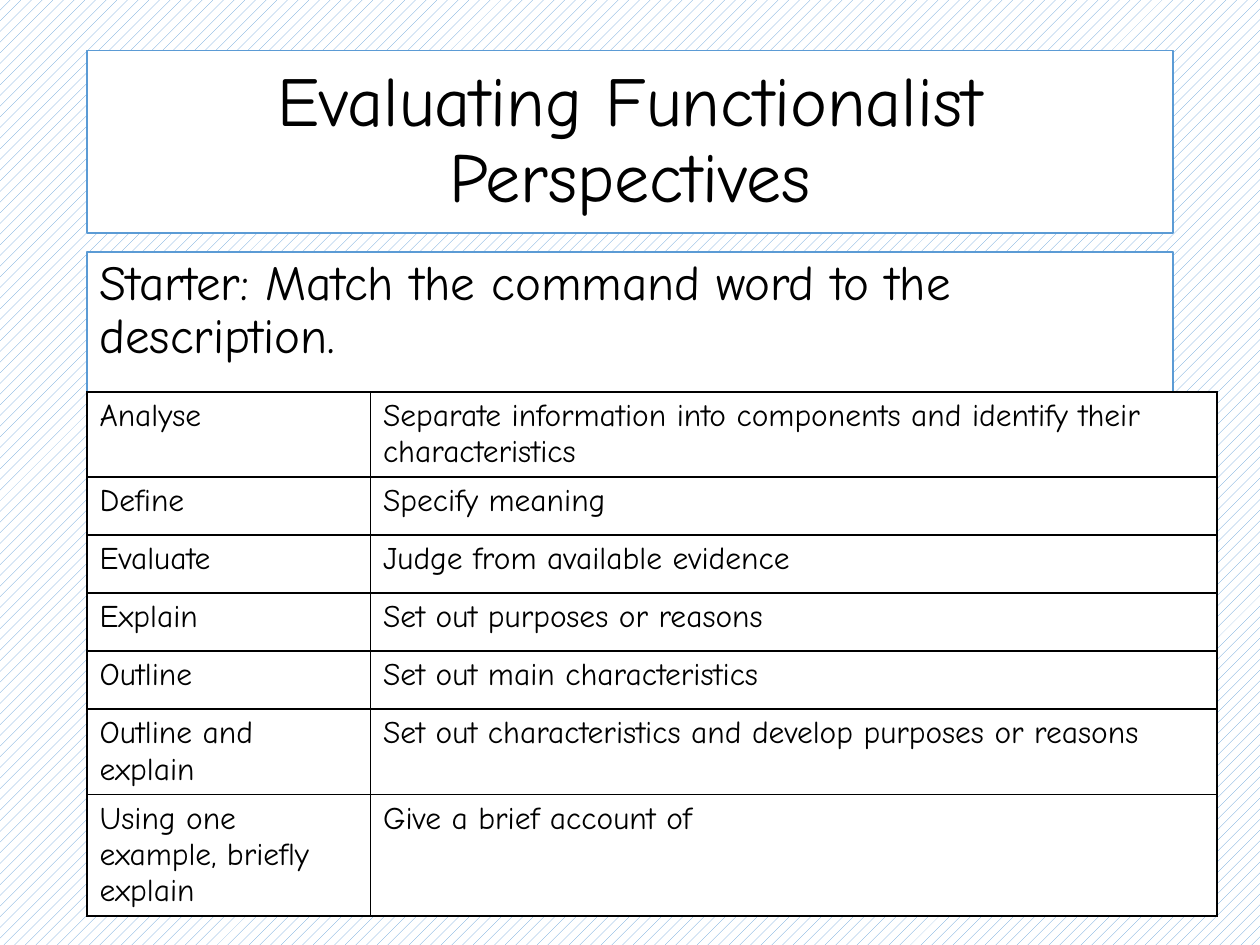
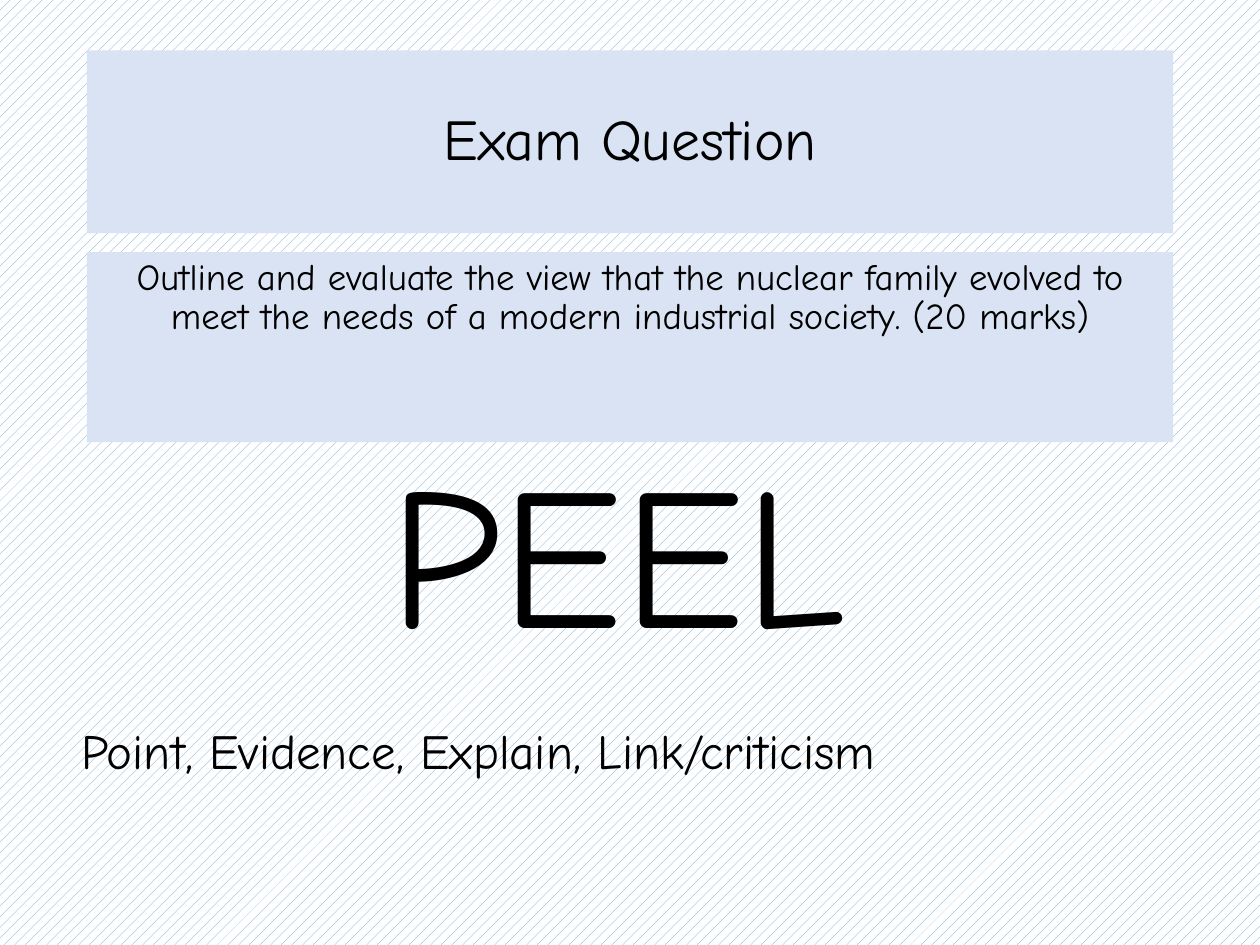
import dataclasses

import lxml.etree
import pptx
import pptx.dml.color
import pptx.enum.dml
import pptx.enum.text
import pptx.oxml
import pptx.oxml.ns
import pptx.util

Inches = pptx.util.Inches
Pt = pptx.util.Pt
ALIGN = pptx.enum.text.PP_ALIGN
ANCHOR = pptx.enum.text.MSO_ANCHOR
qn = pptx.oxml.ns.qn


def rgb(code):
    """Return the colour for a hex code."""
    return pptx.dml.color.RGBColor.from_string(code)


@dataclasses.dataclass(frozen=True)
class Theme:
    """Colours, font and type sizes shared by the slides."""

    font: str = "Comic Neue"
    ink: str = "000000"
    paper: str = "FFFFFF"
    accent: str = "5B9BD5"
    pale: str = "DAE3F3"
    heading: int = 40
    subheading: int = 33
    prompt: int = 28
    question: int = 21
    cell: int = 18
    acronym: int = 115


THEME = Theme()
TITLE_BOX = (0.69, 0.4, 8.62, 1.45)
COMMAND_WORDS = [
    ("Analyse", "Separate information into components and identify their characteristics"),
    ("Define", "Specify meaning"),
    ("Evaluate", "Judge from available evidence"),
    ("Explain", "Set out purposes or reasons"),
    ("Outline", "Set out main characteristics"),
    ("Outline and explain", "Set out characteristics and develop purposes or reasons"),
    ("Using one example, briefly explain", "Give a brief account of"),
]


def apply(target, formats):
    """Set each format value on the target."""
    for name, value in formats.items():
        setattr(target, name, value)


def write(frame, text, size, **paragraph_formats):
    """Write one paragraph in the theme font."""
    paragraph = frame.paragraphs[0]
    apply(paragraph, paragraph_formats)
    run = paragraph.add_run()
    run.text = text
    apply(run.font, {"name": THEME.font, "size": Pt(size), "bold": False})
    run.font.color.rgb = rgb(THEME.ink)
    return paragraph


def place(shape, box):
    """Move and size a shape to a box in inches."""
    apply(shape, dict(zip(("left", "top", "width", "height"), map(Inches, box))))


def panel(placeholder, box, fill, outlined, anchor):
    """Turn a placeholder into a filled panel and return its text frame."""
    place(placeholder, box)
    placeholder.fill.solid()
    placeholder.fill.fore_color.rgb = rgb(fill)
    if outlined:
        placeholder.line.color.rgb = rgb(THEME.accent)
        placeholder.line.width = Pt(1)
    else:
        placeholder.line.fill.background()
    frame = placeholder.text_frame
    apply(frame, {"word_wrap": True, "vertical_anchor": anchor,
                  "auto_size": pptx.enum.text.MSO_AUTO_SIZE.NONE})
    return frame


def title_panel(slide, text, size, fill, outlined=False):
    """Fill the title band at the top of a slide."""
    frame = panel(slide.shapes.title, TITLE_BOX, fill, outlined, ANCHOR.MIDDLE)
    write(frame, text, size, alignment=ALIGN.CENTER, line_spacing=0.9)


def body_panel(slide, box, text, size, fill, align, outlined=False):
    """Fill the body panel with one unbulleted paragraph."""
    frame = panel(slide.placeholders[1], box, fill, outlined, ANCHOR.TOP)
    paragraph = write(frame, text, size, alignment=align, line_spacing=0.9,
                      space_before=Pt(7.5))
    properties = paragraph._p.get_or_add_pPr()
    properties.set("marL", "0")
    properties.set("indent", "0")
    lxml.etree.SubElement(properties, qn("a:buNone"))


def border_cell(cell):
    """Draw a thin line on every side of a table cell."""
    properties = cell._tc.get_or_add_tcPr()
    for side in ("lnL", "lnR", "lnT", "lnB"):
        line = lxml.etree.SubElement(properties, qn(f"a:{side}"), w=str(Pt(1)))
        fill = lxml.etree.SubElement(line, qn("a:solidFill"))
        lxml.etree.SubElement(fill, qn("a:srgbClr"), val=THEME.ink)


def command_table(slide, box, word_width, row_height):
    """Lay out command words beside their descriptions."""
    left, top, width = box
    count = len(COMMAND_WORDS)
    table = slide.shapes.add_table(count, 2, Inches(left), Inches(top), Inches(width),
                                   Inches(row_height * count)).table
    apply(table, {"first_row": False, "horz_banding": False})
    for column, column_width in zip(table.columns, (word_width, width - word_width)):
        column.width = Inches(column_width)
    for row, entry in zip(table.rows, COMMAND_WORDS):
        row.height = Inches(row_height)
        for cell, text in zip(row.cells, entry):
            write(cell.text_frame, text, THEME.cell)
            border_cell(cell)
            cell.fill.solid()
            cell.fill.fore_color.rgb = rgb(THEME.paper)


def free_text(slide, box, text, size):
    """Add a single unwrapped line of text."""
    frame = slide.shapes.add_textbox(*map(Inches, box)).text_frame
    apply(frame, {"word_wrap": False,
                  "auto_size": pptx.enum.text.MSO_AUTO_SIZE.SHAPE_TO_FIT_TEXT})
    write(frame, text, size)


def new_slide(deck):
    """Add a slide with the hatched background."""
    slide = deck.slides.add_slide(deck.slide_layouts[1])
    fill = slide.background.fill
    fill.patterned()
    fill.pattern = pptx.enum.dml.MSO_PATTERN.DASHED_UPWARD_DIAGONAL
    fill.fore_color.rgb = rgb(THEME.accent)
    fill.back_color.rgb = rgb(THEME.paper)
    return slide


def starter_slide(deck):
    """Build the command word matching slide."""
    slide = new_slide(deck)
    title_panel(slide, "Evaluating Functionalist Perspectives", THEME.heading,
                THEME.paper, outlined=True)
    body_panel(slide, (0.69, 2, 8.62, 4.76),
               "Starter: Match the command word to the description.",
               THEME.prompt, THEME.paper, ALIGN.LEFT, outlined=True)
    command_table(slide, (0.69, 3.11, 8.97), word_width=2.25, row_height=0.46)


def exam_slide(deck):
    """Build the exam question slide."""
    slide = new_slide(deck)
    title_panel(slide, "Exam Question", THEME.subheading, THEME.pale)
    body_panel(slide, (0.69, 2, 8.62, 1.51),
               "Outline and evaluate the view that the nuclear family evolved to meet "
               "the needs of a modern industrial society. (20 marks)",
               THEME.question, THEME.pale, ALIGN.CENTER)
    free_text(slide, (2.99, 3.34, 3.95, 2.04), "PEEL", THEME.acronym)
    free_text(slide, (0.55, 5.67, 7.27, 0.57),
              "Point, Evidence, Explain, Link/criticism", THEME.prompt)


def main():
    """Build and save the presentation."""
    deck = pptx.Presentation()
    apply(deck, {"slide_width": Inches(10), "slide_height": Inches(7.5)})
    starter_slide(deck)
    exam_slide(deck)
    deck.save("out.pptx")


if __name__ == "__main__":
    main()
